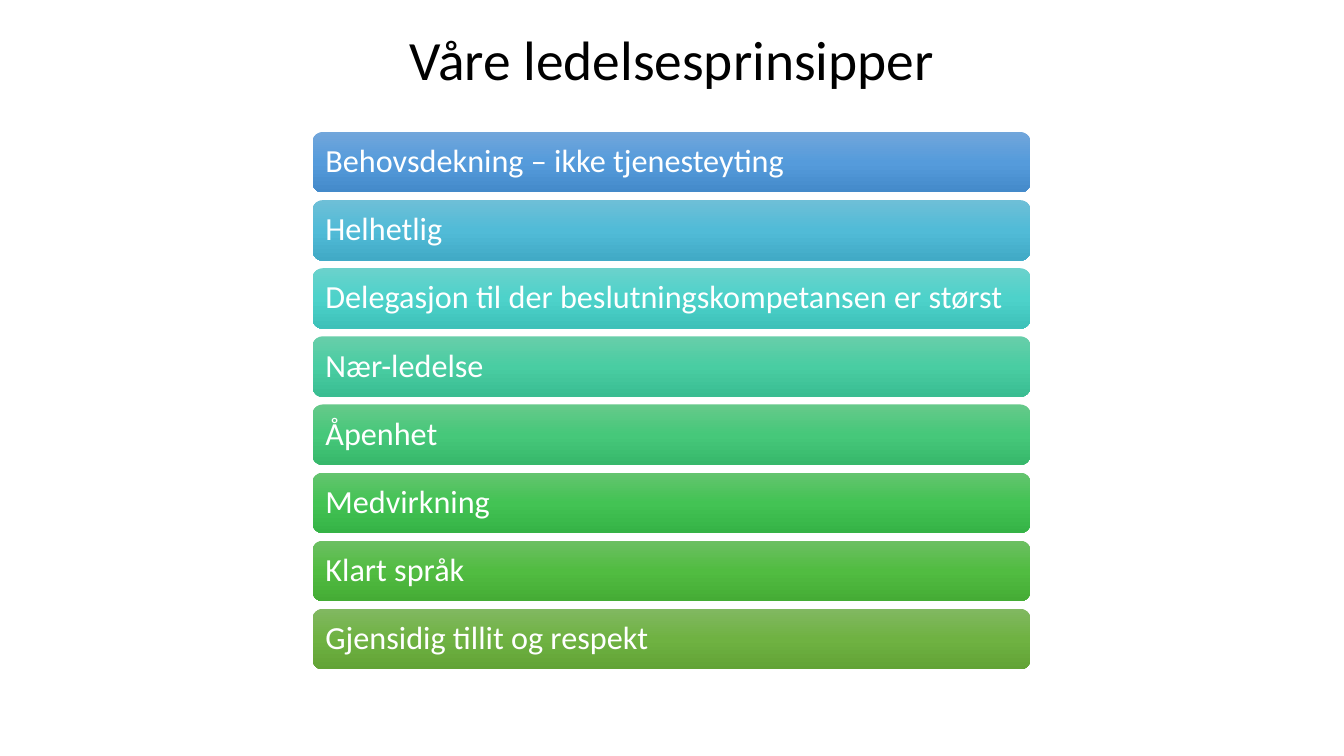
from copy import deepcopy

from pptx import Presentation
from pptx import util as u
from pptx.dml.color import RGBColor
from pptx.enum import shapes, text
from pptx.oxml.ns import qn

INK = {"title": "000000", "label": "FFFFFF"}
BARS = {
    "Behovsdekning – ikke tjenesteyting": ("71A6DB", "559BDB", "448ACA"),
    "Helhetlig": ("6EBFD7", "51BBD7", "41AAC6"),
    "Delegasjon til der beslutningskompetansen er størst": ("6BD2CC", "4DD2CA", "3DC1B9"),
    "Nær-ledelse": ("68CEAA", "49CDA2", "3ABD92"),
    "Åpenhet": ("66C98A", "46C87A", "37B86B"),
    "Medvirkning": ("64C46F", "43C354", "35B346"),
    "Klart språk": ("6CBF62", "51BC41", "45AC35"),
    "Gjensidig tillit og respekt": ("81B861", "6FB242", "62A336"),
}
LEFT, WIDE, HIGH = 3.1, 7.12, 0.6
FIRST, LAST = 1.31, 6.04
STEP = (LAST - FIRST) / (len(BARS) - 1)


class Deck:
    """Holds the font and the current slide, and draws its elements."""

    font = "Calibri"

    def __init__(self, wide, high):
        self.file = Presentation()
        self.file.slide_width = u.Inches(wide)
        self.file.slide_height = u.Inches(high)
        self.slide = self.file.slides.add_slide(self.file.slide_layouts[5])

    def label(self, shape, words, size, ink, align):
        frame = shape.text_frame
        frame.word_wrap = True
        frame.auto_size = text.MSO_AUTO_SIZE.NONE
        frame.vertical_anchor = text.MSO_ANCHOR.MIDDLE
        para = frame.paragraphs[0]
        para.alignment = align
        para.line_spacing = 0.9
        run = para.add_run()
        run.text = words
        run.font.name = self.font
        run.font.size = u.Pt(size)
        run.font.color.rgb = RGBColor.from_string(INK[ink])
        return frame

    def title(self, words, top, high):
        shape = self.slide.shapes.title
        shape.left, shape.top = 0, u.Inches(top)
        shape.width, shape.height = self.file.slide_width, u.Inches(high)
        self.label(shape, words, 39.6, "title", text.PP_ALIGN.CENTER)

    def shade(self, shape, tones):
        fill = shape.fill
        fill.gradient()
        fill.gradient_angle = 270
        stop = next(shape.element.iter(qn("a:gs")))
        stop.addnext(deepcopy(stop))
        for n, (mark, tone) in enumerate(zip(fill.gradient_stops, tones)):
            mark.position = n / 2
            mark.color.rgb = RGBColor.from_string(tone)

    def bar(self, row, words, tones):
        shape = self.slide.shapes.add_shape(
            shapes.MSO_SHAPE.ROUNDED_RECTANGLE,
            u.Inches(LEFT), u.Inches(FIRST + row * STEP),
            u.Inches(WIDE), u.Inches(HIGH))
        shape.shadow.inherit = False
        shape.line.fill.background()
        self.shade(shape, tones)
        frame = self.label(shape, words, 23, "label", text.PP_ALIGN.LEFT)
        frame.margin_left = frame.margin_right = u.Inches(0.1)
        frame.margin_top = frame.margin_bottom = u.Inches(0.1)


def main():
    deck = Deck(13.33, 7.5)
    deck.title("Våre ledelsesprinsipper", 0.31, 0.63)
    for row, (words, tones) in enumerate(BARS.items()):
        deck.bar(row, words, tones)
    deck.file.save("out.pptx")


if __name__ == "__main__":
    main()
